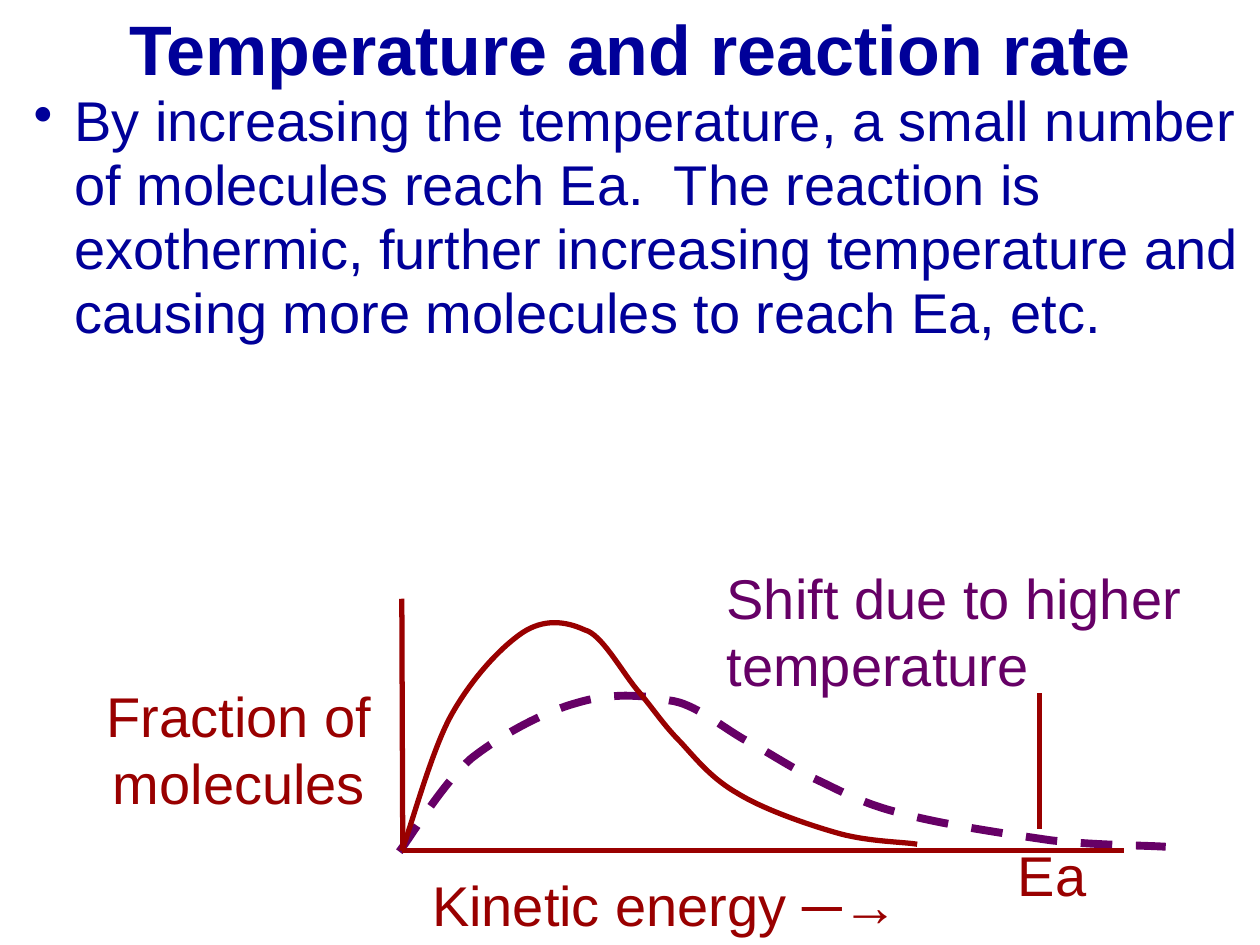
from lxml import etree
from pptx import Presentation
from pptx.dml.color import RGBColor
from pptx.enum.dml import MSO_LINE
from pptx.enum.shapes import MSO_CONNECTOR
from pptx.enum.text import MSO_ANCHOR, PP_ALIGN
from pptx.oxml.ns import qn
from pptx.util import Cm, Pt

STRAIGHT = MSO_CONNECTOR.STRAIGHT
DASH = MSO_LINE.DASH
TOP, MIDDLE = MSO_ANCHOR.TOP, MSO_ANCHOR.MIDDLE
LEFT, CENTER = PP_ALIGN.LEFT, PP_ALIGN.CENTER

COLORS = {"blue": "000099", "red": "990000", "purple": "660066"}
FONT = "Arial"
SIZE = 32
PAD = (0.25, 0.13)

TITLE = "Temperature and reaction rate"
BODY = ("By increasing the temperature, a small number of molecules reach Ea.  "
        "The reaction is exothermic, further increasing temperature and "
        "causing more molecules to reach Ea, etc.")

# Lengths in cm. Each curve: a start, then rows of two handles and an end.
HOT = [
    (8.05, 17.17),
    (8.28, 16.87), (8.92, 15.8), (9.5, 15.29),
    (10.11, 14.81), (10.97, 14.35), (11.63, 14.17),
    (12.29, 13.97), (12.93, 14), (13.49, 14.12),
    (14, 14.17), (14.58, 14.68), (15.06, 14.94),
    (15.54, 15.19), (15.85, 15.42), (16.36, 15.67),
    (16.87, 15.9), (17.32, 16.18), (18.11, 16.38),
    (18.92, 16.61), (20.29, 16.81), (21.18, 16.94),
    (22.07, 17.04), (23.01, 17.04), (23.5, 17.07),
]
COLD = [
    (8.1, 17.15),
    (8.28, 16.69), (8.69, 15.16), (9.09, 14.43),
    (9.5, 13.69), (10.08, 13.06), (10.54, 12.75),
    (10.97, 12.47), (11.4, 12.52), (11.79, 12.7),
    (12.12, 12.78), (12.52, 13.51), (12.83, 13.89),
    (13.16, 14.27), (13.36, 14.6), (13.72, 14.96),
    (14.05, 15.32), (14.35, 15.7), (14.88, 16),
    (15.42, 16.33), (16.33, 16.64), (16.94, 16.81),
    (17.55, 16.97), (18.19, 16.97), (18.49, 17.02),
]
LINES = [
    (20.96, 13.97, 20.96, 16.71),  # Ea mark
    (8.1, 12.07, 8.12, 17.15),     # upright axis
    (8.1, 17.15, 22.66, 17.15),    # level axis
]
# Runs, box, colour, alignment, insets
LABELS = [
    (["Ea"], (20.52, 16.94, 2.97, 1.47), "red", LEFT, (0, 0)),
    (["Fraction of molecules"], (1.91, 13.74, 5.82, 2.74), "red", CENTER, (0, 0)),
    (["Kinetic energy ", "─→"], (8.71, 17.55, 10.77, 1.27), "red", LEFT, (0, 0)),
    (["Shift due to higher temperature"], (14.4, 11.23, 11, 2.97),
     "purple", LEFT, PAD),
]


def paint(line, color, width):
    line.color.rgb = RGBColor.from_string(COLORS[color])
    line.width = Pt(width)


def add_text(slide, runs, box, color, align=LEFT, pad=PAD, size=SIZE,
             anchor=TOP, bullet=False):
    frame = slide.shapes.add_textbox(*map(Cm, box)).text_frame
    frame.word_wrap = True
    frame.vertical_anchor = anchor
    frame.margin_left = frame.margin_right = Cm(pad[0])
    frame.margin_top = frame.margin_bottom = Cm(pad[1])
    para = frame.paragraphs[0]
    if bullet:
        props = para._p.get_or_add_pPr()
        props.set("marL", str(Cm(0.82)))
        props.set("indent", str(-Cm(0.82)))
        etree.SubElement(props, qn("a:buChar")).set("char", "•")
        para.line_spacing = 0.95
    para.alignment = align
    para.font.name = FONT
    para.font.size = Pt(size)
    para.font.color.rgb = RGBColor.from_string(COLORS[color])
    for text in runs:
        para.add_run().text = text
    return para


def add_line(slide, ends):
    line = slide.shapes.add_connector(STRAIGHT, *map(Cm, ends))
    paint(line.line, "red", 3)
    etree.SubElement(line._element.spPr, qn("a:effectLst"))


def add_curve(slide, points, color, width):
    """Draw a smooth path: each three points become one cubic segment."""
    start, *rest = [(Cm(x), Cm(y)) for x, y in points]
    pen = slide.shapes.build_freeform(*start)
    pen.add_line_segments(rest, close=False)
    shape = pen.convert_to_shape()
    steps = list(shape._element.iter(qn("a:lnTo")))
    for i in range(0, len(steps), 3):
        cubic = etree.Element(qn("a:cubicBezTo"))
        steps[i].addprevious(cubic)
        for step in steps[i:i + 3]:
            cubic.append(step[0])
            step.getparent().remove(step)
    shape.fill.background()
    shape.shadow.inherit = False
    paint(shape.line, color, width)
    return shape


def main():
    deck = Presentation()
    deck.slide_width, deck.slide_height = Cm(25.4), Cm(19.05)
    slide = deck.slides.add_slide(deck.slide_layouts[6])

    title = add_text(slide, [TITLE], (0, 0, 25.4, 1.91), "blue", CENTER,
                     size=40, anchor=MIDDLE)
    title.font.bold = True
    add_text(slide, [BODY], (0.43, 1.7, 24.97, 10.36), "blue", bullet=True)

    add_curve(slide, HOT, "purple", 4.5).line.dash_style = DASH
    for ends in LINES:
        add_line(slide, ends)
    add_curve(slide, COLD, "red", 3)

    for label in LABELS:
        para = add_text(slide, *label)
        for arrow in para.runs[1:]:
            arrow.font.bold = True

    deck.save("out.pptx")


if __name__ == "__main__":
    main()
